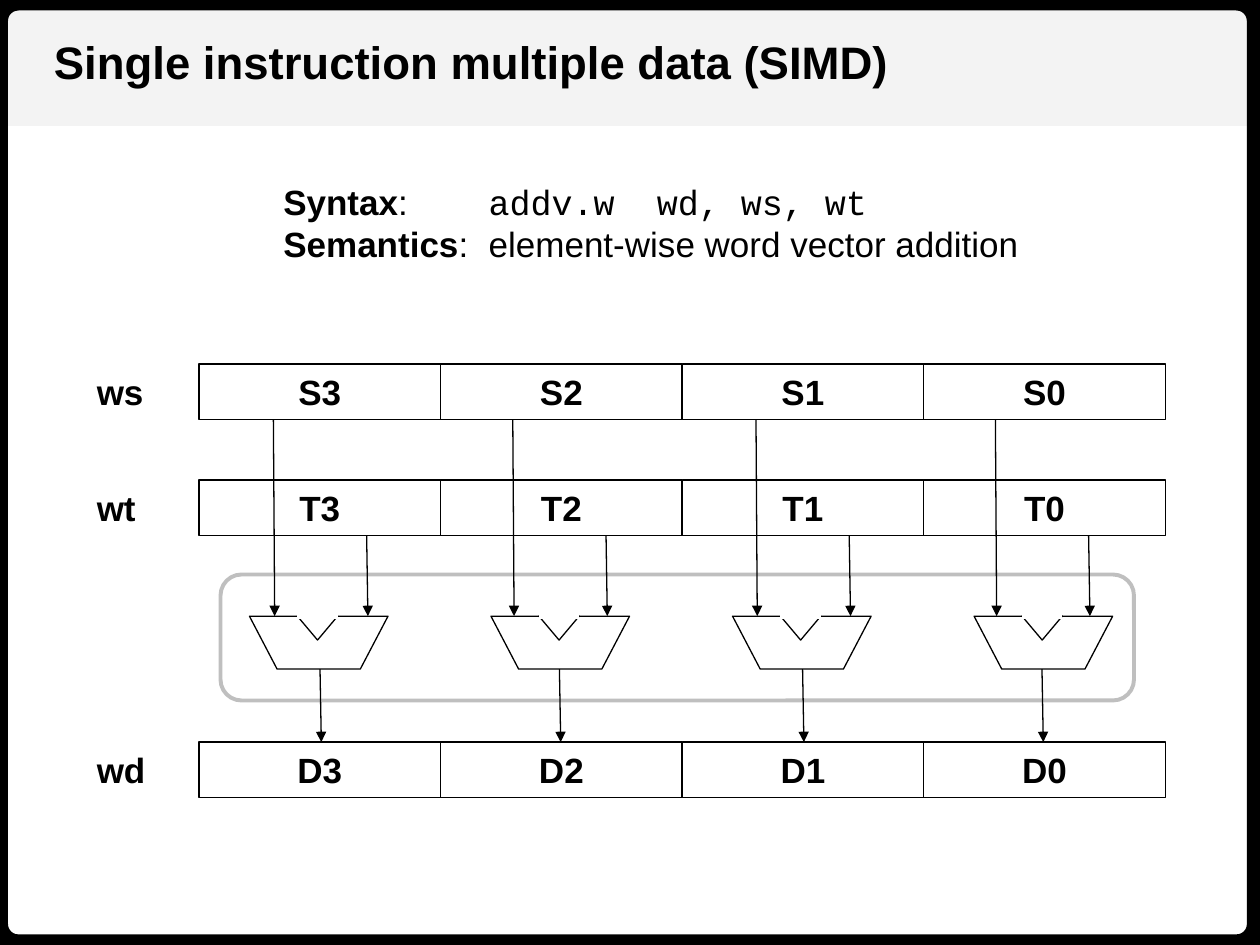
from dataclasses import dataclass

from lxml.etree import SubElement
from pptx import Presentation
from pptx.dml.color import RGBColor
from pptx.enum.shapes import MSO_CONNECTOR, MSO_SHAPE
from pptx.enum.text import MSO_ANCHOR, PP_ALIGN
from pptx.oxml.ns import qn
from pptx.util import Inches, Pt

BLACK = RGBColor(0x00, 0x00, 0x00)
WHITE = RGBColor(0xFF, 0xFF, 0xFF)
BAND_GRAY = RGBColor(0xF3, 0xF3, 0xF3)
OUTLINE_GRAY = RGBColor(0xBF, 0xBF, 0xBF)

CELL_LEFT, CELL_PITCH, CELL_HEIGHT = 1.58, 1.917, 0.44
ADDER_LEFT, ADDER_TOP, ADDER_HEIGHT = 1.98, 4.89, 0.42
NOTCH_OFFSET, NOTCH_WIDTH = 0.38, 0.32


@dataclass(frozen=True)
class Register:
    """A vector register drawn as a labelled row of elements."""

    name: str
    element: str
    top: float


@dataclass(frozen=True)
class Lane:
    """One vector lane with its element index and first arrow position."""

    index: int
    arrow_x: float


SOURCE_S = Register("ws", "S", 2.89)
SOURCE_T = Register("wt", "T", 3.81)
DESTINATION = Register("wd", "D", 5.89)
REGISTERS = (SOURCE_S, SOURCE_T, DESTINATION)
LANES = (Lane(3, 2.17), Lane(2, 4.07), Lane(1, 6.0), Lane(0, 7.9))


def add_run(paragraph, text: str, *, size: float = 20, bold: bool = False,
            font: str = "Arial", color: RGBColor = BLACK) -> None:
    """Append a formatted run to a paragraph."""
    run = paragraph.add_run()
    run.text = text
    run.font.size = Pt(size)
    run.font.bold = bold
    run.font.name = font
    run.font.color.rgb = color


def add_label(slide, text: str, left: float, top: float, width: float,
              height: float, **text_format) -> None:
    """Add a text box holding one bold line."""
    box = slide.shapes.add_textbox(Inches(left), Inches(top), Inches(width), Inches(height))
    box.text_frame.word_wrap = True
    add_run(box.text_frame.paragraphs[0], text, bold=True, **text_format)


def add_preset(slide, preset: MSO_SHAPE, left: float, top: float, width: float, height: float,
               *, fill: RGBColor | None = None, line: RGBColor | None = BLACK,
               line_width: float = 0.75):
    """Add a preset shape with the given fill and outline."""
    shape = slide.shapes.add_shape(
        preset, Inches(left), Inches(top), Inches(width), Inches(height))
    shape.shadow.inherit = False
    if fill is None:
        shape.fill.background()
    else:
        shape.fill.solid()
        shape.fill.fore_color.rgb = fill
    if line is None:
        shape.line.fill.background()
    else:
        shape.line.color.rgb = line
        shape.line.width = Pt(line_width)
    return shape


def add_line(slide, start: tuple[float, float], end: tuple[float, float], *,
             color: RGBColor = BLACK, width: float = 0.75, arrow: bool = True) -> None:
    """Add a straight line, by default with an arrowhead at its end."""
    connector = slide.shapes.add_connector(
        MSO_CONNECTOR.STRAIGHT, *(Inches(value) for value in (*start, *end)))
    connector.line.color.rgb = color
    connector.line.width = Pt(width)
    if arrow:
        SubElement(connector.line._get_or_add_ln(), qn("a:tailEnd"), type="triangle")
    SubElement(connector._element.spPr, qn("a:effectLst"))


def add_register(slide, register: Register) -> None:
    """Draw the name and the element cells of a register."""
    add_label(slide, register.name, 0.67, register.top, 0.8, CELL_HEIGHT)
    for column, lane in enumerate(LANES):
        cell = add_preset(slide, MSO_SHAPE.RECTANGLE, CELL_LEFT + column * CELL_PITCH,
                          register.top, CELL_PITCH, CELL_HEIGHT)
        cell.text_frame.vertical_anchor = MSO_ANCHOR.MIDDLE
        paragraph = cell.text_frame.paragraphs[0]
        paragraph.alignment = PP_ALIGN.CENTER
        add_run(paragraph, f"{register.element}{lane.index}", bold=True)


def add_adder(slide, left: float) -> None:
    """Draw an adder with a notch in its upper edge."""
    add_preset(slide, MSO_SHAPE.FLOWCHART_MANUAL_OPERATION,
               left, ADDER_TOP, 1.1, ADDER_HEIGHT)
    notch_left = left + NOTCH_OFFSET
    notch = add_preset(slide, MSO_SHAPE.ISOSCELES_TRIANGLE,
                       notch_left, ADDER_TOP, NOTCH_WIDTH, 0.19)
    notch.rotation = 180
    add_line(slide, (notch_left, ADDER_TOP), (notch_left + NOTCH_WIDTH, ADDER_TOP),
             color=WHITE, width=3, arrow=False)


def add_lane_arrows(slide, lane: Lane) -> None:
    """Draw the two operand arrows and the result arrow of a lane."""
    spans = (
        (0, SOURCE_S.top + CELL_HEIGHT, ADDER_TOP),
        (0.74, SOURCE_T.top + CELL_HEIGHT, ADDER_TOP),
        (0.37, ADDER_TOP + ADDER_HEIGHT, DESTINATION.top),
    )
    for offset, top, bottom in spans:
        x = lane.arrow_x + offset
        add_line(slide, (x, top), (x + 0.01, bottom))


def add_definition(slide) -> None:
    """Add the syntax and semantics of the instruction."""
    box = slide.shapes.add_textbox(Inches(2.15), Inches(1.38), Inches(6.16), Inches(0.77))
    frame = box.text_frame
    frame.word_wrap = True
    rows = (
        ("Syntax", "addv.w  wd, ws, wt", "Courier New"),
        ("Semantics", "element-wise word vector addition", "Arial"),
    )
    for number, (term, meaning, font) in enumerate(rows):
        paragraph = frame.add_paragraph() if number else frame.paragraphs[0]
        tabs = SubElement(paragraph._p.get_or_add_pPr(), qn("a:tabLst"))
        SubElement(tabs, qn("a:tab"), pos=str(Inches(1.63)), algn="l")
        add_run(paragraph, term, bold=True)
        add_run(paragraph, ":\t")
        add_run(paragraph, meaning, font=font)


def main() -> None:
    """Build and save the slide."""
    presentation = Presentation()
    presentation.slide_width, presentation.slide_height = Inches(10), Inches(7.5)
    slide = presentation.slides.add_slide(presentation.slide_layouts[6])

    add_preset(slide, MSO_SHAPE.RECTANGLE, 0, 0, 10, 1, fill=BAND_GRAY, line=None)
    border = add_preset(slide, MSO_SHAPE.ROUNDED_RECTANGLE, -0.02, 0, 10, 7.5, line_width=12)
    border.adjustments[0] = 0.022
    add_preset(slide, MSO_SHAPE.ROUNDED_RECTANGLE, 1.75, 4.56, 7.25, 1,
               line=OUTLINE_GRAY, line_width=2.25)
    add_label(slide, "Single instruction multiple data (SIMD)", 0.33, 0.22, 7.2, 0.54, size=26)

    for register in REGISTERS:
        add_register(slide, register)
    for column, lane in enumerate(LANES):
        add_adder(slide, ADDER_LEFT + column * CELL_PITCH)
        add_lane_arrows(slide, lane)
    add_definition(slide)
    presentation.save("out.pptx")


if __name__ == "__main__":
    main()
